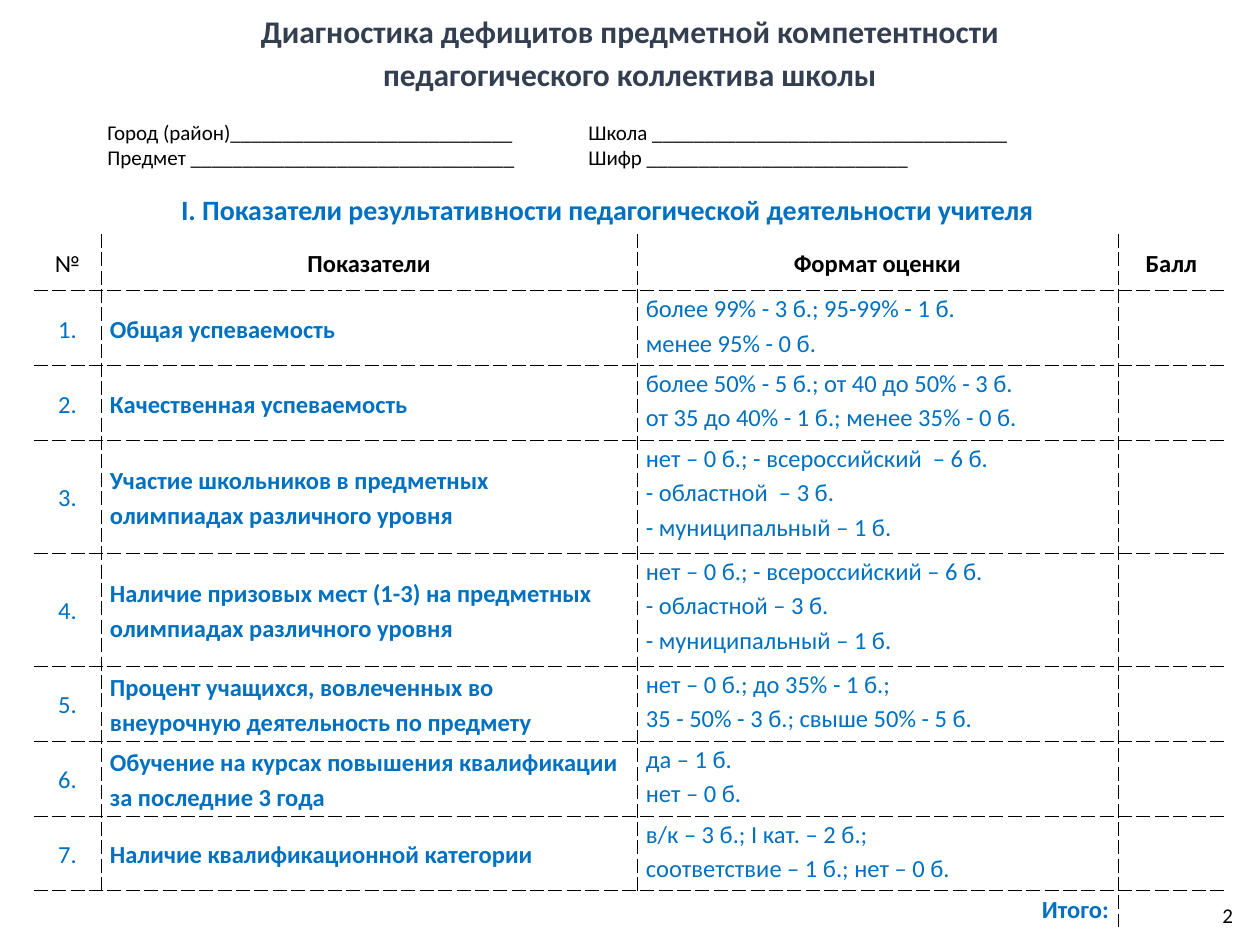
from lxml.etree import SubElement
from pptx import Presentation
from pptx.dml.color import RGBColor
from pptx.enum.text import MSO_ANCHOR, PP_ALIGN
from pptx.oxml.ns import qn
from pptx.util import Pt

PX = 7257  # EMU in one px, 126 px to the inch
DARK = RGBColor(0x33, 0x3F, 0x50)
BLUE = RGBColor(0x00, 0x70, 0xC0)
BLACK = RGBColor(0x00, 0x00, 0x00)
FONT = "Calibri"
NO_STYLE = "{2D5ABB26-0587-4C30-8999-92F81FD0307C}"

# Content
TITLE = ["Диагностика дефицитов предметной компетентности",
         "педагогического коллектива школы"]
FIELDS = [
    "Город (район)___________________________\tШкола __________________________________",
    "Предмет _______________________________\tШифр _________________________",
]
SECTION = "I. Показатели результативности педагогической деятельности учителя"
HEADERS = ["№", "Показатели", "Формат оценки", "Балл"]
INDICATORS = [
    ("Общая успеваемость",
     ["более 99% - 3 б.; 95-99% - 1 б.", "менее 95% - 0 б."]),
    ("Качественная успеваемость",
     ["более 50% - 5 б.; от 40 до 50% - 3 б.", "от 35 до 40% - 1 б.; менее 35% - 0 б."]),
    ("Участие школьников в предметных олимпиадах различного уровня",
     ["нет – 0 б.; - всероссийский  – 6 б.", "- областной  – 3 б.", "- муниципальный – 1 б."]),
    ("Наличие призовых мест (1-3) на предметных олимпиадах различного уровня",
     ["нет – 0 б.; - всероссийский – 6 б.", "- областной – 3 б.", "- муниципальный – 1 б."]),
    ("Процент учащихся, вовлеченных во внеурочную деятельность по предмету",
     ["нет – 0 б.; до 35% - 1 б.;", "35 - 50% - 3 б.; свыше 50% - 5 б."]),
    ("Обучение на курсах повышения квалификации за последние 3 года",
     ["да – 1 б.", "нет – 0 б."]),
    ("Наличие квалификационной категории",
     ["в/к – 3 б.; I кат. – 2 б.;", "соответствие – 1 б.; нет – 0 б."]),
]
TOTAL = "Итого:"
PAGE_NUMBER = "2"

COLUMN_WIDTHS = [67, 536, 481, 107]
HEADER_HEIGHT, TOTAL_HEIGHT = 56, 36
HEIGHT_BY_LINES = {2: 75, 3: 113}


def write(frame, lines, size=14, color=BLUE, bold=False, align=PP_ALIGN.LEFT, spacing=None):
    """Fill a text frame with one paragraph for each line."""
    for index, line in enumerate(lines):
        para = frame.paragraphs[0] if index == 0 else frame.add_paragraph()
        para.alignment = align
        if spacing:
            para.line_spacing = spacing
        span = para.add_run()
        span.text = line
        span.font.name, span.font.size, span.font.bold = FONT, Pt(size), bold
        span.font.color.rgb = color


def add_text(page, left, top, width, height, lines, **style):
    box = page.shapes.add_textbox(left * PX, top * PX, width * PX, height * PX)
    box.text_frame.word_wrap = True
    write(box.text_frame, lines, **style)
    return box


def add_tab(para, position):
    tabs = SubElement(para._p.get_or_add_pPr(), qn("a:tabLst"))
    SubElement(tabs, qn("a:tab"), pos=str(position * PX), algn="l")


def draw_borders(cell, visible):
    """Give the cell dashed lines on the visible sides and none on the others."""
    properties = cell._tc.get_or_add_tcPr()
    for side in "LRTB":
        line = SubElement(properties, qn("a:ln" + side), w=str(Pt(0.25)))
        if side in visible:
            fill = SubElement(line, qn("a:solidFill"))
            SubElement(fill, qn("a:srgbClr"), val=str(BLACK))
            SubElement(line, qn("a:prstDash"), val="sysDash")
        else:
            SubElement(line, qn("a:noFill"))


def fill_cell(cell, lines, anchor=MSO_ANCHOR.MIDDLE, **style):
    cell.vertical_anchor = anchor
    write(cell.text_frame, lines, spacing=1.15, **style)


def add_indicator_table(page, left, top):
    heights = [HEADER_HEIGHT, *(HEIGHT_BY_LINES[len(scores)] for _, scores in INDICATORS),
               TOTAL_HEIGHT]
    last_row, last_column = len(heights) - 1, len(COLUMN_WIDTHS) - 1
    frame = page.shapes.add_table(len(heights), len(COLUMN_WIDTHS), left * PX, top * PX,
                                  sum(COLUMN_WIDTHS) * PX, sum(heights) * PX)
    table = frame.table
    table.first_row = table.horz_banding = False
    table._tbl.tblPr.find(qn("a:tableStyleId")).text = NO_STYLE
    for column, width in zip(table.columns, COLUMN_WIDTHS):
        column.width = width * PX
    for row, height in zip(table.rows, heights):
        row.height = height * PX
    table.cell(last_row, 0).merge(table.cell(last_row, last_column - 1))

    # Margins and inner grid lines
    for row in range(last_row + 1):
        for column in range(last_column + 1):
            cell = table.cell(row, column)
            cell.margin_left = cell.margin_right = 9 * PX
            cell.margin_top = cell.margin_bottom = 0
            if not cell.is_spanned:
                sides = {"L": column > 0, "R": column < last_column,
                         "T": row > 0, "B": row < last_row}
                draw_borders(cell, [side for side, shown in sides.items() if shown])
            cell.fill.background()
            if column == last_column and row:
                para = cell.text_frame.paragraphs[0]
                para._p.get_or_add_endParaRPr().set("sz", "1400")

    # Header, indicators and total
    for column, header in enumerate(HEADERS):
        fill_cell(table.cell(0, column), [header], color=BLACK, bold=column > 0,
                  align=PP_ALIGN.CENTER)
    for row, (name, scores) in enumerate(INDICATORS, start=1):
        fill_cell(table.cell(row, 0), [f"{row}."], align=PP_ALIGN.CENTER)
        fill_cell(table.cell(row, 1), [name], bold=True)
        fill_cell(table.cell(row, 2), scores, anchor=MSO_ANCHOR.TOP, align=PP_ALIGN.JUSTIFY)
    fill_cell(table.cell(last_row, 0), [TOTAL], anchor=MSO_ANCHOR.TOP, bold=True,
              align=PP_ALIGN.RIGHT)


def main():
    deck = Presentation()
    deck.slide_width, deck.slide_height = 1260 * PX, 945 * PX
    page = deck.slides.add_slide(deck.slide_layouts[6])

    # Title and form fields
    add_text(page, 0, 0, 1260, 98, TITLE, size=18, color=DARK, bold=True,
             align=PP_ALIGN.CENTER, spacing=1.15)
    fields = add_text(page, 95, 113, 1247 - 95, 63, FIELDS, size=12, color=BLACK)
    for para in fields.text_frame.paragraphs:
        add_tab(para, 481)

    # Section heading and table
    add_text(page, 140, 186, 935, 47, [SECTION], size=16, bold=True, align=PP_ALIGN.CENTER)
    add_indicator_table(page, 34, 234)

    # Page number
    add_text(page, 1210, 896, 34, 40, [PAGE_NUMBER], size=12, color=BLACK)
    deck.save("out.pptx")


if __name__ == "__main__":
    main()
